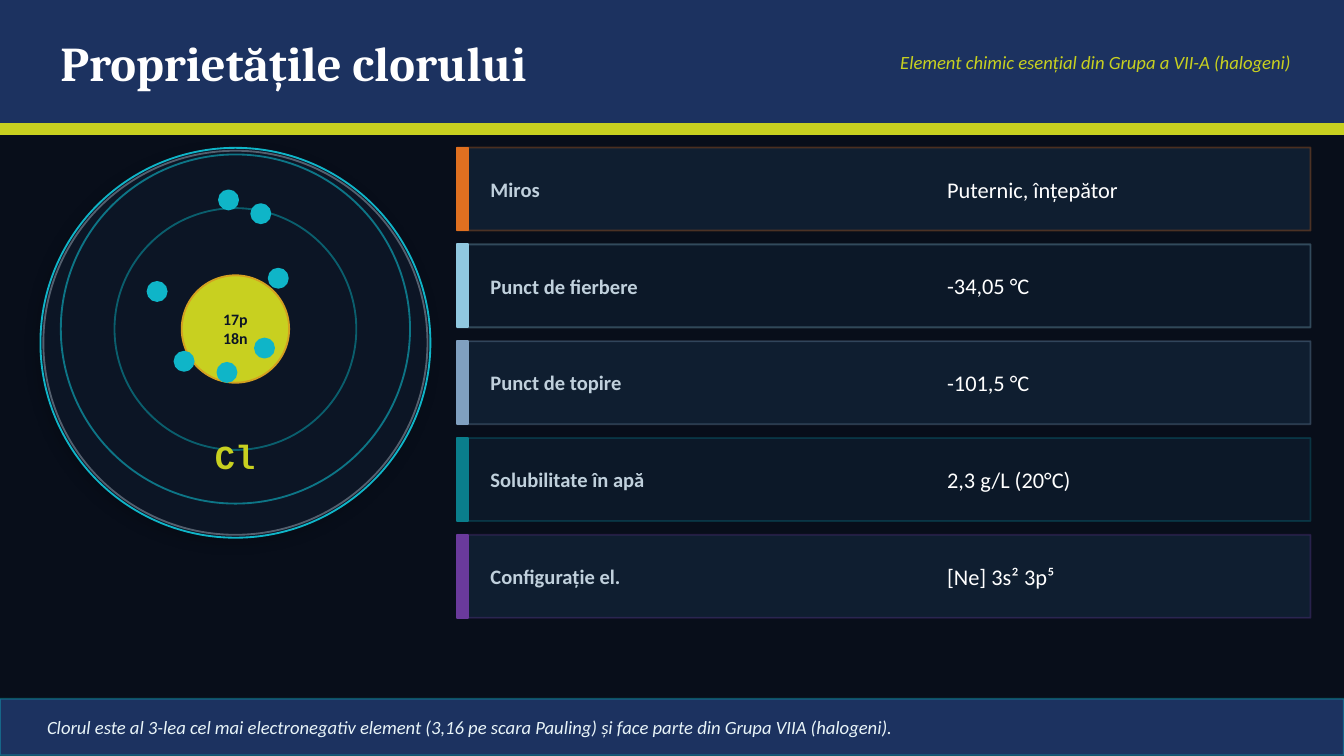
"""Build a slide on the properties of chlorine, with an atom diagram and property rows."""
import pptx
import pptx.util
import pptx.dml.color
import pptx.enum.shapes
import pptx.enum.text
import pptx.oxml
import pptx.oxml.ns

Cm, Pt = pptx.util.Cm, pptx.util.Pt
RECT = pptx.enum.shapes.MSO_SHAPE.RECTANGLE
OVAL = pptx.enum.shapes.MSO_SHAPE.OVAL
ALIGN = pptx.enum.text.PP_ALIGN

COLORS = {
    "night": "080E1A", "navy": "1C3260", "lime": "C8D020", "white": "FFFFFF",
    "ink": "0C1525", "cyan": "0FB5C8", "teal": "0A7E8C", "gold": "D4A020",
    "silver": "C0D0DC", "ice": "E8F4F8", "row_a": "0F1E30", "row_b": "0C1828",
    "orange": "E07020", "sky": "90C8E0", "steel": "80A0C0", "violet": "6A3A9C",
}
TITLE = "Proprietățile clorului"
SUBTITLE = "Element chimic esențial din Grupa a VII-A (halogeni)"
NUCLEUS = ["17p", "18n"]
SYMBOL = "Cl"
PROPERTIES = [
    ("Miros", "Puternic, înțepător", "orange"),
    ("Punct de fierbere", "-34,05 °C", "sky"),
    ("Punct de topire", "-101,5 °C", "steel"),
    ("Solubilitate în apă", "2,3 g/L (20°C)", "teal"),
    ("Configurație el.", "[Ne] 3s² 3p⁵", "violet"),
]
FOOTER = ("Clorul este al 3-lea cel mai electronegativ element (3,16 pe scara Pauling) "
          "și face parte din Grupa VIIA (halogeni).")
RINGS = [(6.22, 4.57, "teal", 70), (6.22, 6.6, "cyan", 60), (6.48, 7.26, "silver", 40)]
ELECTRONS = [(4.32, 3.78), (4.93, 4.04), (5.26, 5.26), (5, 6.58),
             (4.29, 7.04), (3.48, 6.83), (2.97, 5.51)]
FORMATS = {
    "title": {"name": "Cambria", "size": Pt(26), "bold": True},
    "note": {"name": "Calibri", "size": Pt(10), "italic": True},
    "nucleus": {"name": "Calibri", "size": Pt(8.5), "bold": True},
    "symbol": {"name": "Courier New", "size": Pt(18), "bold": True},
    "label": {"name": "Calibri", "size": Pt(11), "bold": True},
    "value": {"name": "Calibri", "size": Pt(12)},
}
WIDTH, HEIGHT, HEADER = 25.4, 14.29, 2.34
ATOM_X, ATOM_Y, NUCLEUS_Y = 4.45, 6.48, 6.22
ROW_X, ROW_Y, ROW_W, ROW_H, PITCH, BAR = 8.64, 2.79, 16.13, 1.57, 1.83, 0.2
LABEL_X, LABEL_W, VALUE_X, VALUE_W, PAD = 9.02, 8.64, 17.65, 6.86, 0.15
FOOT_Y, FOOT_H = 13.21, 1.07


def rgb(color):
    return pptx.dml.color.RGBColor.from_string(COLORS[color])


def shape(s, kind, box, fill, line=None, opacity=100):
    sp = s.shapes.add_shape(kind, *map(Cm, box))
    sp.shadow.inherit = False
    if fill:
        sp.fill.solid()
        sp.fill.fore_color.rgb = rgb(fill)
    else:
        sp.fill.background()
    sp.line.width = Pt(1)
    sp.line.color.rgb = rgb(line or fill)
    if opacity < 100:
        clr = sp.line._ln.find(".//" + pptx.oxml.ns.qn("a:srgbClr"))
        clr.append(pptx.oxml.parse_xml(
            f'<a:alpha {pptx.oxml.ns.nsdecls("a")} val="{opacity * 1000}"/>'))
    return sp


def circle(s, x, y, d, *style):
    return shape(s, OVAL, (x - d / 2, y - d / 2, d, d), *style)


def drop_shadow(sp):
    sp._element.spPr.find(pptx.oxml.ns.qn("a:effectLst")).append(pptx.oxml.parse_xml(
        f'<a:outerShdw {pptx.oxml.ns.nsdecls("a")} blurRad="{Pt(7)}" dist="{Pt(3)}" '
        'dir="8100000" algn="bl" rotWithShape="0"><a:srgbClr val="000000">'
        '<a:alpha val="18000"/></a:srgbClr></a:outerShdw>'))


def text(s, box, lines, style, color, align=ALIGN.LEFT):
    tf = s.shapes.add_textbox(*map(Cm, box)).text_frame
    tf.word_wrap = True
    tf.vertical_anchor = pptx.enum.text.MSO_ANCHOR.MIDDLE
    for i, line in enumerate(lines):
        p = tf.add_paragraph() if i else tf.paragraphs[0]
        p.alignment = align
        r = p.add_run()
        r.text = line
        r.font.color.rgb = rgb(color)
        for key, value in FORMATS[style].items():
            setattr(r.font, key, value)


def add_header(s):
    shape(s, RECT, (0, 0, WIDTH, HEADER), "navy")
    shape(s, RECT, (0, HEADER, WIDTH, 0.2), "lime")
    text(s, (0.89, 0, 22.86, HEADER), [TITLE], "title", "white")
    text(s, (15.24, 0, 9.4, HEADER), [SUBTITLE], "note", "lime", ALIGN.RIGHT)


def add_atom(s):
    drop_shadow(circle(s, ATOM_X, ATOM_Y, 7.37, "ink", "cyan"))
    d = 2.03
    circle(s, ATOM_X, NUCLEUS_Y, d, "lime", "gold")
    text(s, (ATOM_X - d / 2, NUCLEUS_Y - d / 2, d, d), NUCLEUS, "nucleus", "ink", ALIGN.CENTER)
    for y, d, color, opacity in RINGS:
        circle(s, ATOM_X, y, d, None, color, opacity)
    for x, y in ELECTRONS:
        circle(s, x, y, 0.36, "cyan")
    text(s, (0.76, 8.18, 7.37, 0.89), [SYMBOL], "symbol", "lime", ALIGN.CENTER)


def add_rows(s):
    for i, (label, value, color) in enumerate(PROPERTIES):
        y = ROW_Y + i * PITCH
        shape(s, RECT, (ROW_X, y, ROW_W, ROW_H), ("row_a", "row_b")[i % 2], color, 30)
        shape(s, RECT, (ROW_X, y, BAR, ROW_H), color)
        inner = ROW_H - 2 * PAD
        text(s, (LABEL_X, y + PAD, LABEL_W, inner), [label], "label", "silver")
        text(s, (VALUE_X, y + PAD, VALUE_W, inner), [value], "value", "white")


def add_footer(s):
    shape(s, RECT, (0, FOOT_Y, WIDTH, FOOT_H), "navy", "cyan", 40)
    text(s, (0.64, FOOT_Y, 24.13, FOOT_H), [FOOTER], "note", "ice")


def main():
    prs = pptx.Presentation()
    prs.slide_width, prs.slide_height = Cm(WIDTH), Cm(HEIGHT)
    s = prs.slides.add_slide(prs.slide_layouts[6])
    s.background.fill.solid()
    s.background.fill.fore_color.rgb = rgb("night")
    for add in (add_header, add_atom, add_rows, add_footer):
        add(s)
    prs.save("out.pptx")


if __name__ == "__main__":
    main()
